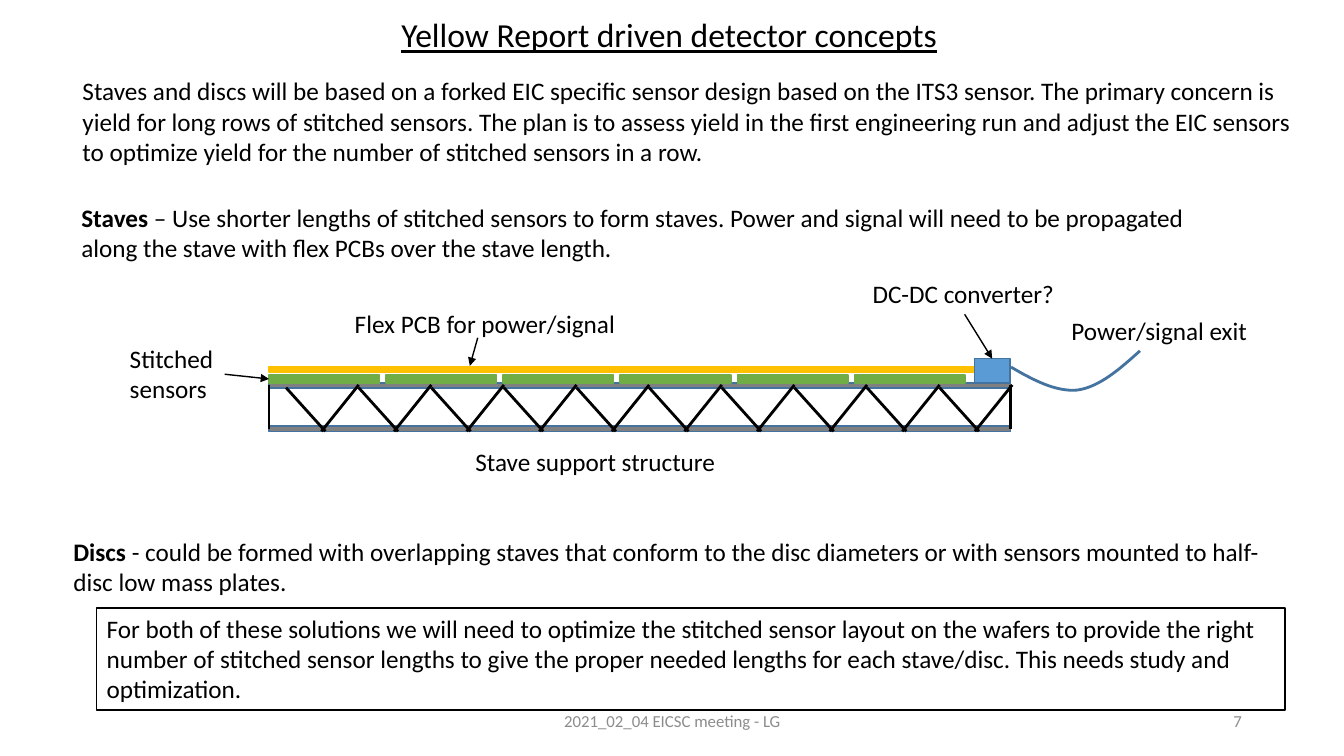
"""Build the slide on stave and disc detector concepts."""
from lxml.etree import SubElement
from pptx import Presentation
from pptx.dml.color import RGBColor
from pptx.enum.shapes import MSO_CONNECTOR, MSO_SHAPE
from pptx.enum.text import MSO_ANCHOR, MSO_AUTO_SIZE, PP_ALIGN
from pptx.oxml.ns import qn
from pptx.util import Cm, Pt

rgb = RGBColor.from_string


def write(sp, paras, size=18, color="000000", align=PP_ALIGN.LEFT, frame=None, **font):
    tf = sp.text_frame
    layout = {"word_wrap": True, "auto_size": MSO_AUTO_SIZE.SHAPE_TO_FIT_TEXT,
              "vertical_anchor": MSO_ANCHOR.TOP}
    for name, value in {**layout, **(frame or {})}.items():
        setattr(tf, name, value)
    for i, runs in enumerate(paras):
        p = tf.add_paragraph() if i else tf.paragraphs[0]
        p.alignment = align
        for text, bold in runs:
            r = p.add_run()
            r.text = text
            for name, value in {"name": "Calibri", "size": Pt(size), "bold": bold, **font}.items():
                setattr(r.font, name, value)
            r.font.color.rgb = rgb(color)


def draw_line(x1, y1, x2, y2, width=2, arrow=False):
    ln = s.shapes.add_connector(MSO_CONNECTOR.STRAIGHT, Cm(x1), Cm(y1), Cm(x2), Cm(y2))
    ln.line.color.rgb = rgb("000000")
    ln.line.width = Pt(width)
    if arrow:
        SubElement(ln.line._get_or_add_ln(), qn("a:tailEnd"), type="triangle")
    SubElement(ln._element.spPr, qn("a:effectLst"))
    return ln


prs = Presentation()
prs.slide_width, prs.slide_height = Cm(33.87), Cm(19.05)
s = prs.slides.add_slide(prs.slide_layouts[5])

title = s.shapes.title
for name, value in {"left": 9.86, "top": 0.23, "width": 14.15, "height": 1.27}.items():
    setattr(title, name, Cm(value))
write(title, [[("Yellow Report driven detector concepts", False)]], 24,
      frame={"word_wrap": False}, underline=True)

paragraphs = [
    (1.83, 1.78, 31.19, 2.57, [
        ("Staves and discs will be based on a forked EIC specific sensor design based on the "
         "ITS3 sensor. The primary concern is yield for long rows of stitched sensors. The plan "
         "is to assess yield in the first engineering run and adjust the EIC sensors to optimize "
         "yield for the number of stitched sensors in a row.", False)]),
    (1.8, 4.98, 29.72, 1.8, [
        ("Staves", True),
        (" – Use shorter lengths of stitched sensors to form staves. Power and signal will need "
         "to be propagated along the stave with flex PCBs over the stave length.", False)]),
    (1.6, 13.39, 31.37, 2.57, [
        ("Discs", True),
        (" - could be formed with overlapping staves that conform to the disc diameters or with "
         "sensors mounted to half-disc low mass plates.", False)]),
]
for x, y, w, h, runs in paragraphs:
    write(s.shapes.add_textbox(Cm(x), Cm(y), Cm(w), Cm(h)), [runs])

left, length = 6.78, 18.69
right = left + length
rails = [(left, y, length, 0.13, "808080", "43739E") for y in (9.65, 10.74)]
sensors = [(left + 2.95 * i, 9.45, 2.79, 0.2, "70AD47", "70AD47") for i in range(6)]
flex = (left, 9.25, length, 0.13, "FFC000", "FFC000")
converter = (24.56, 9.04, 0.89, 0.61, "5B9BD5", "43739E")
parts = []
for x, y, w, h, fill, edge in [*rails, *sensors, flex, converter]:
    sp = s.shapes.add_shape(MSO_SHAPE.RECTANGLE, Cm(x), Cm(y), Cm(w), Cm(h))
    sp.shadow.inherit = False
    sp.fill.solid()
    sp.fill.fore_color.rgb = rgb(fill)
    sp.line.color.rgb = rgb(edge)
    sp.line.width = Pt(1)
    parts.append(sp)

for x in (left, right):
    draw_line(x, 9.7, x, 10.82)
for i in range(10):
    foot = 8.15 + 1.83 * i
    draw_line(foot - 0.94, 9.77, foot + 0.05, 10.87)
    draw_line(foot + 0.89, 9.7, foot - 0.05, 10.87)

curves = [((25.48, 9.25), (26.04, 9.58), (26.62, 9.88), (27.15, 9.83)),
          ((27.15, 9.83), (27.71, 9.75), (28.22, 9.3), (28.73, 8.84))]
points = []
for a, b, c, d in curves:
    for t in [n / 16 for n in range(1, 17)]:
        points.append([Cm((1 - t) ** 3 * a[k] + 3 * (1 - t) ** 2 * t * b[k]
                          + 3 * (1 - t) * t ** 2 * c[k] + t ** 3 * d[k]) for k in (0, 1)])
fb = s.shapes.build_freeform(Cm(25.48), Cm(9.25))
fb.add_line_segments(points, close=False)
cable = fb.convert_to_shape()
cable.shadow.inherit = False
cable.fill.background()
cable.line.color.rgb = rgb("43739E")
cable.line.width = Pt(2)

labels = [
    (8.69, 7.65, 7.14, 1.02, ["Flex PCB for power/signal"]),
    (11.73, 11.13, 6.63, 1.02, ["Stave support structure"]),
    (26.75, 7.82, 4.98, 1.02, ["Power/signal exit"]),
    (21.74, 6.88, 5.13, 1.02, ["DC-DC converter?"]),
    (3.02, 8.53, 2.64, 1.8, ["Stitched", "sensors"]),
]
for x, y, w, h, rows in labels:
    label = s.shapes.add_textbox(Cm(x), Cm(y), Cm(w), Cm(h))
    write(label, [[(row, False)] for row in rows], frame={"word_wrap": False})

draw_line(12.04, 8.51, 11.84, 9.22, 1, True)
draw_line(24.31, 7.92, 25, 9.04, 1, True).end_connect(parts[-1], 0)
sensor_arrow = draw_line(5.66, 9.43, left, 9.55, 1, True)
sensor_arrow.begin_connect(label, 3)
sensor_arrow.end_connect(parts[len(rails)], 1)

box = s.shapes.add_shape(MSO_SHAPE.RECTANGLE, Cm(2.44), Cm(15.32), Cm(29.95), Cm(2.57))
box.shadow.inherit = False
box.fill.background()
box.line.color.rgb = rgb("000000")
box.line.width = Pt(1)
write(box, [[("For both of these solutions we will need to optimize the stitched sensor layout on "
              "the wafers to provide the right number of stitched sensor lengths to give the "
              "proper needed lengths for each stave/disc. This needs study and optimization.",
              False)]])

footers = [(11.23, 11.43, "2021_02_04 EICSC meeting - LG", PP_ALIGN.CENTER),
           (23.93, 7.62, "7", PP_ALIGN.RIGHT)]
for x, w, text, align in footers:
    write(s.shapes.add_textbox(Cm(x), Cm(17.65), Cm(w), Cm(1.02)), [[(text, False)]], 12,
          "8C8C8C", align,
          {"auto_size": MSO_AUTO_SIZE.NONE, "vertical_anchor": MSO_ANCHOR.MIDDLE})

prs.save("out.pptx")
